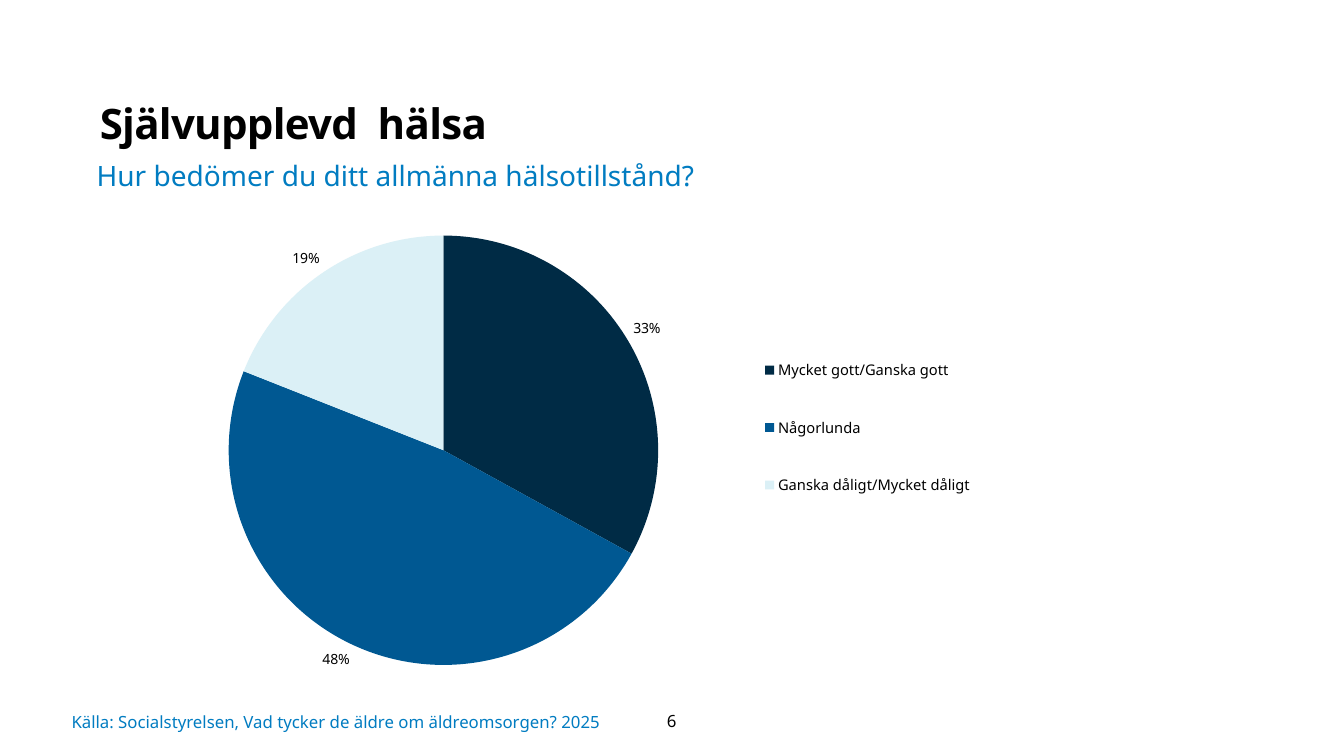
from lxml import etree
from pptx import Presentation
from pptx.chart.data import CategoryChartData
from pptx.dml.color import RGBColor
from pptx.enum.chart import XL_CHART_TYPE as ChartType
from pptx.enum.chart import XL_LABEL_POSITION as LabelPosition
from pptx.enum.chart import XL_LEGEND_POSITION as LegendPosition
from pptx.enum.text import MSO_ANCHOR as Anchor
from pptx.enum.text import PP_ALIGN as Align
from pptx.oxml.ns import qn
from pptx.util import Inches, Pt

WIDTH, HEIGHT = 13.33, 7.5
FONT = "Noto Sans"
BLACK = RGBColor(0x00, 0x00, 0x00)
BLUE = RGBColor(0x01, 0x7C, 0xC1)
HEALTH = [
    ("Mycket gott/Ganska gott", 33, RGBColor(0x00, 0x2B, 0x45)),
    ("Någorlunda", 48, RGBColor(0x00, 0x58, 0x92)),
    ("Ganska dåligt/Mycket dåligt", 19, RGBColor(0xDB, 0xF0, 0xF6)),
]


def add_text(slide, text, box, size, color=BLACK, bold=False, align=Align.LEFT,
             anchor=Anchor.TOP, insets=(0.1, 0.05, 0.1, 0.05), line_spacing=1.0, tracking=0):
    """Add one line of formatted text in a box given in inches."""
    frame = slide.shapes.add_textbox(*map(Inches, box)).text_frame
    frame.word_wrap = True
    frame.vertical_anchor = anchor
    (frame.margin_left, frame.margin_top,
     frame.margin_right, frame.margin_bottom) = map(Inches, insets)
    paragraph = frame.paragraphs[0]
    paragraph.alignment = align
    paragraph.line_spacing = line_spacing
    run = paragraph.add_run()
    run.text = text
    set_font(run.font, size, color)
    run.font.bold = bold
    if tracking:
        run._r.get_or_add_rPr().set("spc", str(round(tracking * 100)))


def set_font(font, size, color=BLACK):
    """Give a font the slide's typeface with a size and colour."""
    font.name, font.size = FONT, Pt(size)
    font.color.rgb = color


def set_layout(element, shares, inner=False):
    """Place a chart part by its left, top, width and height shares."""
    for old in element.findall(qn("c:layout")):
        element.remove(old)
    layout = etree.Element(qn("c:layout"))
    manual = etree.SubElement(layout, qn("c:manualLayout"))
    settings = [("layoutTarget", "inner")] if inner else []
    settings += [("xMode", "edge"), ("yMode", "edge"), *zip("xywh", shares)]
    for name, value in settings:
        etree.SubElement(manual, qn(f"c:{name}")).set("val", str(value))
    position = element.find(qn("c:legendPos"))
    if position is None:
        element.insert(0, layout)
    else:
        position.addnext(layout)


def add_heading(slide, left, top, width, height):
    """Add the title and the survey question below it."""
    add_text(slide, "Självupplevd  hälsa", (left + 0.13, top, width - 0.13, height * 0.51),
             30, bold=True, insets=(0, 0, 0.1, 0.05), line_spacing=1.1, tracking=-0.5)
    add_text(slide, "Hur bedömer du ditt allmänna hälsotillstånd?",
             (left, top + height * 0.58, width * 0.79, height * 0.42), 20, BLUE)


def add_health_pie(slide, left, top, width, height):
    """Add the pie of self-rated health with its legend."""
    names, values, colors = zip(*HEALTH)
    data = CategoryChartData()
    data.categories = names
    data.add_series("Series 1", values)
    box = map(Inches, (left, top, width, height))
    chart = slide.shapes.add_chart(ChartType.PIE, *box, data).chart
    chart.has_title = False
    set_font(chart.font, 10)
    plot = chart.plots[0]
    plot.vary_by_categories = True
    for index, color in enumerate(colors):
        fill = plot.series[0].points[index].format.fill
        fill.solid()
        fill.fore_color.rgb = color
    plot.has_data_labels = True
    labels = plot.data_labels
    labels.show_percentage, labels.show_value = True, False
    labels.number_format, labels.number_format_is_linked = "0%", False
    labels.position = LabelPosition.OUTSIDE_END
    set_font(labels.font, 10)
    chart.has_legend = True
    chart.legend.position = LegendPosition.RIGHT
    chart.legend.include_in_layout = False
    set_font(chart.legend.font, 10.5)
    set_layout(chart.legend._element, (0.64, 0.24, 0.3, 0.43))
    plot_area = chart._chartSpace.chart.plotArea
    set_layout(plot_area, (0.064, 0.061, 0.488, 0.881), inner=True)


def add_footer(slide, left, top, width, height):
    """Add the source line and the page number."""
    source_width = width * 0.84
    add_text(slide, "Källa: Socialstyrelsen, Vad tycker de äldre om äldreomsorgen? 2025",
             (left, top, source_width, height), 12, BLUE,
             anchor=Anchor.MIDDLE, insets=(0, 0, 0, 0))
    add_text(slide, "6", (left + source_width, top, width - source_width, height * 0.95),
             12, align=Align.CENTER, anchor=Anchor.MIDDLE)


def main():
    """Build and save the slide."""
    presentation = Presentation()
    presentation.slide_width, presentation.slide_height = Inches(WIDTH), Inches(HEIGHT)
    slide = presentation.slides.add_slide(presentation.slide_layouts[6])
    add_heading(slide, 0.86, 0.92, 9.96, 1.04)
    add_health_pie(slide, 1.71, 2.04, 8.73, 4.84)
    add_footer(slide, 0.71, 6.95, 6.47, 0.42)
    presentation.save("out.pptx")


if __name__ == "__main__":
    main()
